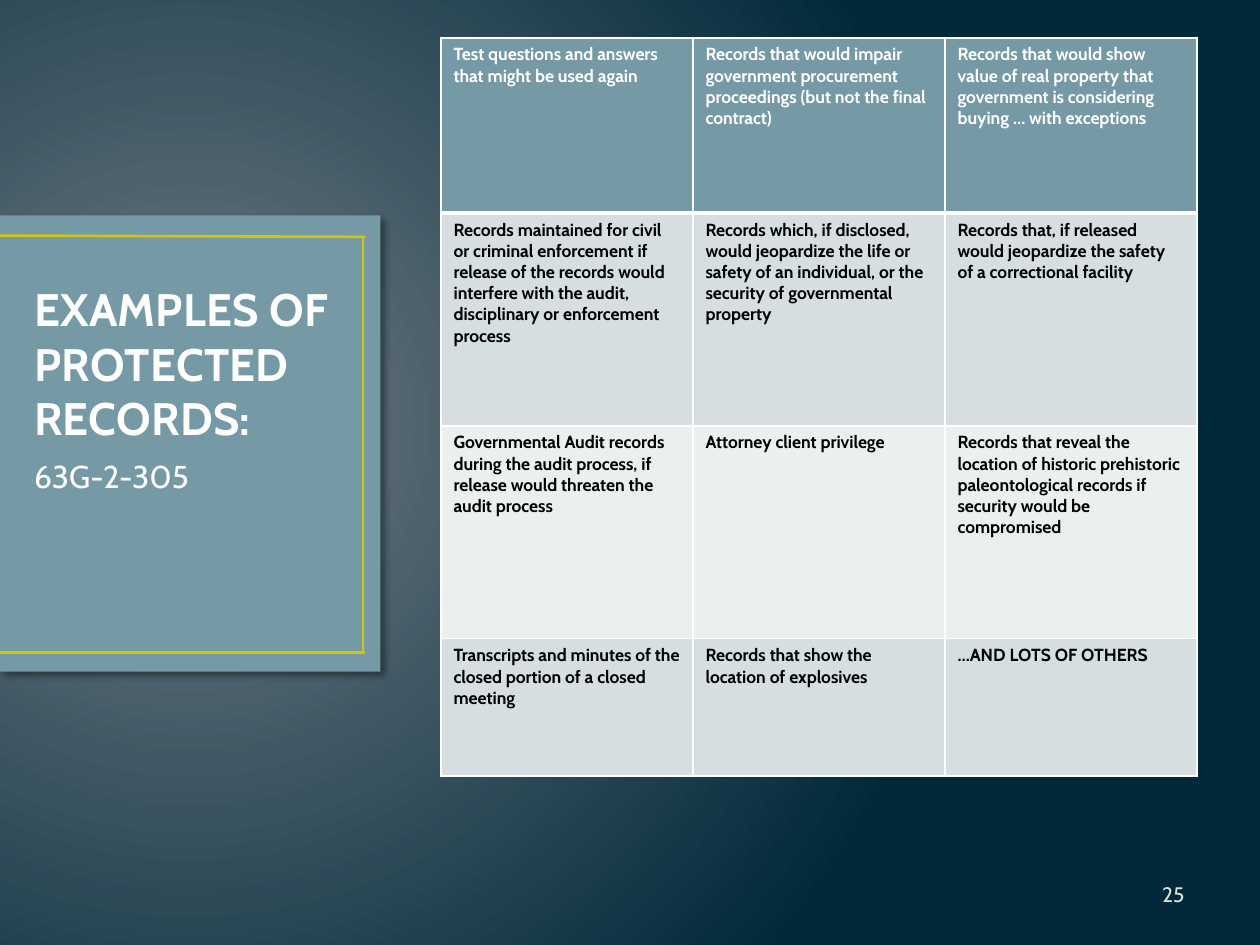
from pptx import Presentation
from pptx.dml.color import RGBColor
from pptx.enum.shapes import MSO_CONNECTOR, MSO_SHAPE
from pptx.enum.text import MSO_ANCHOR, MSO_AUTO_SIZE, PP_ALIGN
from pptx.oxml import parse_xml
from pptx.oxml.ns import nsdecls
from pptx.util import Inches, Pt

# Content
TITLE = "EXAMPLES OF PROTECTED RECORDS:"
STATUTE = "63G-2-305"
PAGE_NUMBER = "25"
RECORDS = [
    ("Test questions and answers that might be used again",
     "Records that would impair government procurement proceedings (but not the final contract)",
     "Records that would show value of real property that government is considering buying … with exceptions"),
    ("Records maintained for civil or criminal enforcement if release of the records would "
     "interfere with the audit, disciplinary or enforcement process",
     "Records which, if disclosed, would jeopardize the life or safety of an individual, "
     "or the security of governmental property",
     "Records that, if released would jeopardize the safety of a correctional facility"),
    ("Governmental Audit records during the audit process, if release would threaten the audit process",
     "Attorney client privilege",
     "Records that reveal the location of historic prehistoric paleontological records "
     "if security would be compromised"),
    ("Transcripts and minutes of the closed portion of a closed meeting",
     "Records that show the location of explosives",
     "…AND LOTS OF OTHERS"),
]
ROW_HEIGHTS = [1.39, 1.69, 1.69, 1.09]
COLUMN_WIDTH = 2
FRAME_LINES = [  # x1, y1, x2, y2
    (2.88, 1.87, 2.88, 5.17),
    (0, 1.87, 2.9, 1.88),
    (0, 5.18, 2.9, 5.18),
]

THEME = {
    "font": "Cabin",
    "glow": "717C84", "night": "01293A",
    "panel": "759AA5", "frame": "CFC60D",
    "bands": ("D6DEE1", "ECEFF0"),
    "white": "FFFFFF", "black": "000000",
    "title": "FEFEFE", "title_outline": "AF9F5E", "number": "DFE6D0",
    "title_size": 26, "statute_size": 18, "number_size": 12, "cell_size": 10,
}


def color(name):
    return RGBColor.from_string(THEME.get(name, name))


def style(paragraph, size, text_color, bold=False):
    font = paragraph.font
    font.name, font.size, font.bold = THEME["font"], Pt(THEME[size]), bold
    font.color.rgb = color(text_color)


def place(shape, left, top, width, height):
    shape.left, shape.top = Inches(left), Inches(top)
    shape.width, shape.height = Inches(width), Inches(height)


def set_text(shape, text, anchor, size, text_color, bold=False, align=PP_ALIGN.LEFT):
    frame = shape.text_frame
    frame.text = text
    frame.word_wrap, frame.auto_size = True, MSO_AUTO_SIZE.NONE
    frame.vertical_anchor = anchor
    paragraph = frame.paragraphs[0]
    paragraph.alignment = align
    style(paragraph, size, text_color, bold)
    return paragraph


def add_border(cell, side, width):
    cell._tc.get_or_add_tcPr().append(parse_xml(
        f'<a:ln{side} {nsdecls("a")} w="{Pt(width)}"><a:solidFill>'
        f'<a:srgbClr val="{THEME["white"]}"/></a:solidFill></a:ln{side}>'))


def add_background(slide):
    slide._element.cSld.insert(0, parse_xml(
        f'<p:bg {nsdecls("p", "a")}><p:bgPr><a:gradFill rotWithShape="1"><a:gsLst>'
        f'<a:gs pos="0"><a:srgbClr val="{THEME["glow"]}"/></a:gs>'
        f'<a:gs pos="100000"><a:srgbClr val="{THEME["night"]}"/></a:gs></a:gsLst>'
        '<a:path path="circle"><a:fillToRect l="15000" t="50000" r="85000" b="60000"/></a:path>'
        '</a:gradFill><a:effectLst/></p:bgPr></p:bg>'))


def add_panel(slide):
    panel = slide.shapes.add_shape(MSO_SHAPE.RECTANGLE, 0, 0, 0, 0)
    place(panel, 0, 1.71, 3.02, 3.62)
    panel.fill.solid()
    panel.fill.fore_color.rgb = color("panel")
    panel.line.fill.background()
    panel.shadow.inherit = False
    panel._element.spPr.remove(panel._element.spPr[-1])
    panel._element.spPr.append(parse_xml(
        f'<a:effectLst {nsdecls("a")}><a:outerShdw blurRad="{Pt(4)}" dist="{Pt(3)}" '
        f'dir="2700000" algn="tl" rotWithShape="0"><a:srgbClr val="{THEME["black"]}">'
        '<a:alpha val="40000"/></a:srgbClr></a:outerShdw></a:effectLst>'))
    for ends in FRAME_LINES:
        edge = slide.shapes.add_connector(MSO_CONNECTOR.STRAIGHT, *map(Inches, ends))
        edge.line.color.rgb = color("frame")
        edge.line.width = Pt(1.5)
        edge._element.spPr.append(parse_xml(f'<a:effectLst {nsdecls("a")}/>'))


def add_records(slide):
    columns = len(RECORDS[0])
    table = slide.shapes.add_table(
        len(RECORDS), columns, Inches(3.5), Inches(0.3),
        Inches(COLUMN_WIDTH * columns), Inches(sum(ROW_HEIGHTS))).table
    for column in table.columns:
        column.width = Inches(COLUMN_WIDTH)
    for r, (records, height) in enumerate(zip(RECORDS, ROW_HEIGHTS)):
        table.rows[r].height = Inches(height)
        header = r == 0
        for c, record in enumerate(records):
            cell = table.cell(r, c)
            cell.text = record
            style(cell.text_frame.paragraphs[0], "cell_size", "white" if header else "black", True)
            for side in "LRTB":
                header_rule = (header and side == "B") or (r == 1 and side == "T")
                add_border(cell, side, 3 if header_rule else 1)
            cell.fill.solid()
            cell.fill.fore_color.rgb = color("panel" if header else THEME["bands"][(r - 1) % 2])


def add_title(slide):
    title, statute = slide.placeholders
    for placeholder, top in ((title, 2.08), (statute, 3.58)):
        place(placeholder, 0.17, top, 2.6, 1.5)
        slide.shapes._spTree.append(placeholder._element)  # bring in front of the panel
    set_text(title, TITLE, MSO_ANCHOR.BOTTOM, "title_size", "title", True)
    run_format = title.text_frame.paragraphs[0].runs[0]._r.get_or_add_rPr()
    run_format.set("spc", "20")
    run_format.insert(0, parse_xml(
        f'<a:ln {nsdecls("a")} w="{Pt(1)}"><a:solidFill>'
        f'<a:srgbClr val="{THEME["title_outline"]}"/></a:solidFill></a:ln>'))
    line = set_text(statute, STATUTE, MSO_ANCHOR.TOP, "statute_size", "white")
    line.space_before = Pt(3.6)


def add_page_number(slide):
    number = slide.shapes.add_textbox(Inches(7.17), Inches(6.9), Inches(2.33), Inches(0.4))
    set_text(number, PAGE_NUMBER, MSO_ANCHOR.MIDDLE, "number_size", "number", align=PP_ALIGN.RIGHT)


def main():
    deck = Presentation()
    deck.slide_width, deck.slide_height = Inches(10), Inches(7.5)
    slide = deck.slides.add_slide(deck.slide_layouts.get_by_name("Section Header"))
    add_background(slide)
    add_panel(slide)
    add_records(slide)
    add_page_number(slide)
    add_title(slide)
    deck.save("out.pptx")


if __name__ == "__main__":
    main()
